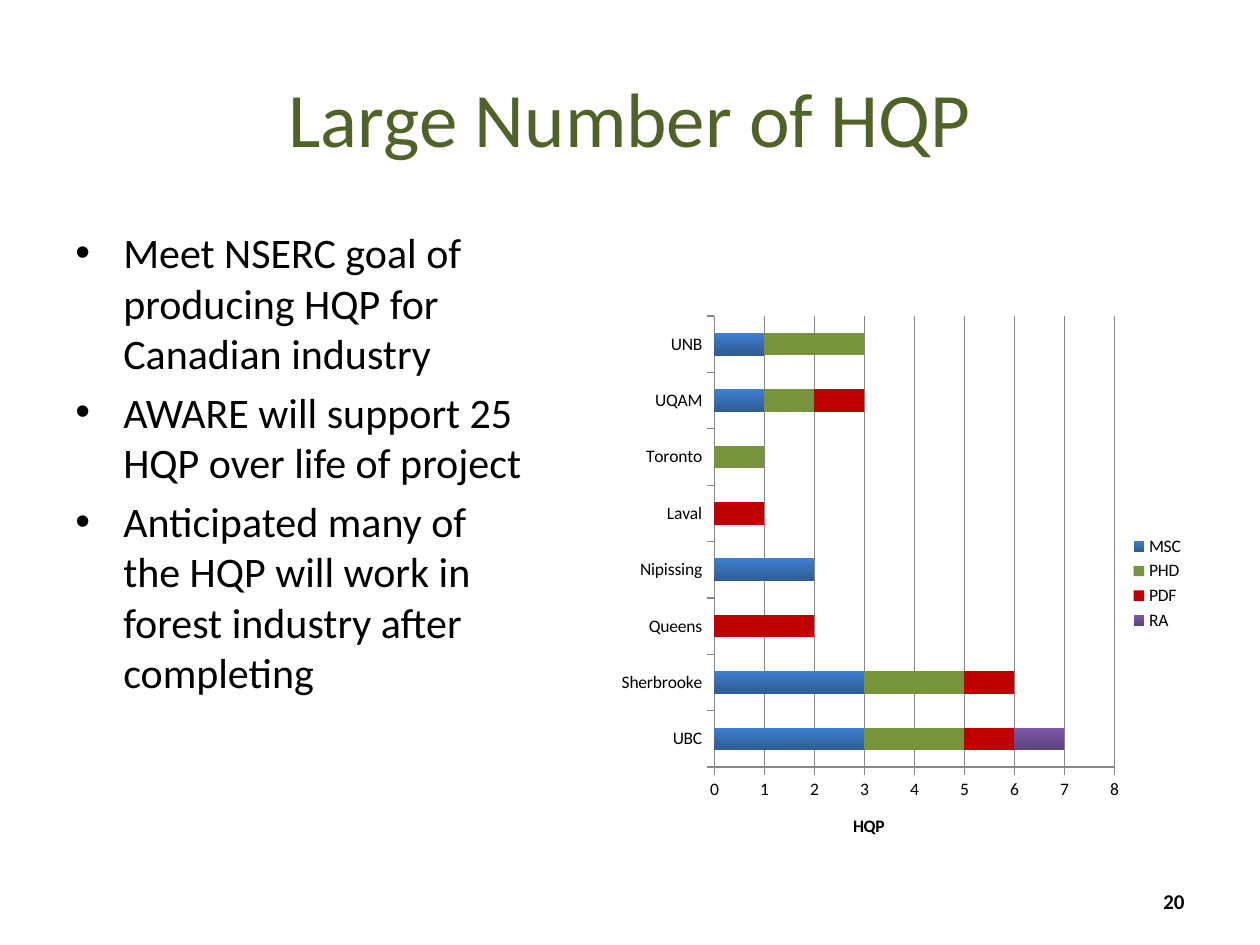
from dataclasses import dataclass

from lxml.etree import SubElement
from pptx import Presentation
from pptx.chart.data import CategoryChartData
from pptx.dml.color import RGBColor
from pptx.enum.chart import XL_CHART_TYPE as ChartType
from pptx.enum.chart import XL_LEGEND_POSITION as LegendPosition
from pptx.enum.chart import XL_TICK_MARK as TickMark
from pptx.enum.text import MSO_ANCHOR as Anchor
from pptx.enum.text import PP_ALIGN as Align
from pptx.oxml.ns import qn
from pptx.util import Inches, Pt


@dataclass(frozen=True)
class Theme:
    font: str = "Calibri"
    ink: str = "000000"
    heading: str = "4F6228"
    grid: str = "868686"
    title_size: int = 44
    body_size: int = 24
    number_size: int = 12
    chart_size: int = 10


THEME = Theme()

GOALS = [
    "Meet NSERC goal of producing HQP for Canadian industry",
    "AWARE will support 25 HQP over life of project",
    "Anticipated many of the HQP will work in forest industry after completing",
]
UNIVERSITIES = ["UBC", "Sherbrooke", "Queens", "Nipissing",
                "Laval", "Toronto", "UQAM", "UNB"]
POSITIONS = {
    "MSC": ([3, 3, None, 2, None, None, 1, 1], ["3E7FD0", "2F5C94"]),
    "PHD": ([2, 2, None, None, None, 1, 1, 2], ["77933C"]),
    "PDF": ([1, 1, 2, None, 1, None, 1, None], ["C00000"]),
    "RA": ([1] + [None] * 7, ["7F58A8", "5C437F"]),
}


def style_font(font, size, color=THEME.ink, bold=False):
    for name, value in dict(name=THEME.font, size=Pt(size), bold=bold).items():
        setattr(font, name, value)
    font.color.rgb = RGBColor.from_string(color)


def add_text(slide, box, lines, size, color=THEME.ink, bold=False,
             align=Align.LEFT, anchor=Anchor.MIDDLE, bulleted=False):
    frame = slide.shapes.add_textbox(*map(Inches, box)).text_frame
    frame.word_wrap = True
    frame.vertical_anchor = anchor
    for index, line in enumerate(lines):
        paragraph = frame.add_paragraph() if index else frame.paragraphs[0]
        paragraph.text = line
        paragraph.alignment = align
        if bulleted:
            add_bullet(paragraph)
            paragraph.space_before = Pt(0.2 * size if index else 0)
        style_font(paragraph.runs[0].font, size, color, bold)


def add_bullet(paragraph):
    properties = paragraph._p.get_or_add_pPr()
    properties.set("marL", str(Inches(0.38)))
    properties.set("indent", str(Inches(-0.38)))
    SubElement(properties, qn("a:buFont"), typeface="Arial")
    SubElement(properties, qn("a:buChar"), char="•")


def set_layout(parent, before, **fractions):
    for old in parent.findall(qn("c:layout")):
        parent.remove(old)
    layout = SubElement(parent, qn("c:layout"))
    manual = SubElement(layout, qn("c:manualLayout"))
    if "w" in fractions:
        SubElement(manual, qn("c:layoutTarget"), val="inner")
    for mode in ("xMode", "yMode"):
        SubElement(manual, qn(f"c:{mode}"), val="edge")
    for name, value in fractions.items():
        SubElement(manual, qn(f"c:{name}"), val=str(value))
    parent.find(qn(before)).addprevious(layout)


def fill_series(series, colors):
    fill = series.format.fill
    if len(colors) == 1:
        fill.solid()
        fill.fore_color.rgb = RGBColor.from_string(colors[0])
        return
    fill.gradient()
    fill.gradient_angle = 270
    for stop, color in zip(fill.gradient_stops, colors):
        stop.color.rgb = RGBColor.from_string(color)


def style_axes(chart):
    counts = chart.value_axis
    limits = dict(minimum_scale=0, maximum_scale=8, major_unit=1,
                  has_major_gridlines=True)
    for name, value in limits.items():
        setattr(counts, name, value)
    for axis in (chart.category_axis, counts):
        axis.major_tick_mark = TickMark.OUTSIDE
        style_font(axis.tick_labels.font, THEME.chart_size)
    for part in (chart.category_axis, counts, counts.major_gridlines):
        part.format.line.width = Pt(0.75)
        part.format.line.color.rgb = RGBColor.from_string(THEME.grid)
    title = counts.axis_title
    title.text_frame.text = "HQP"
    style_font(title.text_frame.paragraphs[0].runs[0].font,
               THEME.chart_size, bold=True)
    set_layout(title._element, "c:overlay", x=0.41, y=0.91)


def add_positions_chart(slide, box):
    data = CategoryChartData()
    data.categories = UNIVERSITIES
    for name, (values, _) in POSITIONS.items():
        data.add_series(name, values)
    chart = slide.shapes.add_chart(
        ChartType.BAR_STACKED, *map(Inches, box), data).chart
    style_font(chart.font, THEME.chart_size)
    chart.has_title = False
    chart.has_legend = True
    chart.legend.position = LegendPosition.RIGHT
    chart.legend.include_in_layout = False
    style_font(chart.legend.font, THEME.chart_size)
    plot = chart.plots[0]
    for name, value in dict(gap_width=150, overlap=100,
                            vary_by_categories=False).items():
        setattr(plot, name, value)
    for series, (_, colors) in zip(plot.series, POSITIONS.values()):
        fill_series(series, colors)
    style_axes(chart)
    set_layout(chart._chartSpace.chart.plotArea, "c:barChart",
               x=0.18, y=0.02, w=0.68, h=0.81)


def add_hqp_slide(deck):
    slide = deck.slides.add_slide(deck.slide_layouts[6])
    add_text(slide, (0.5, 0.3, 9, 1.25), ["Large Number of HQP"],
             THEME.title_size, THEME.heading, align=Align.CENTER)
    add_text(slide, (0.5, 1.75, 3.75, 4.95), GOALS, THEME.body_size,
             anchor=Anchor.TOP, bulleted=True)
    add_positions_chart(slide, (4.83, 2.42, 4.67, 4.42))
    add_text(slide, (7.17, 6.95, 2.33, 0.4), ["20"], THEME.number_size,
             bold=True, align=Align.RIGHT)


def main():
    deck = Presentation()
    deck.slide_width, deck.slide_height = Inches(10), Inches(7.5)
    add_hqp_slide(deck)
    deck.save("out.pptx")


if __name__ == "__main__":
    main()
